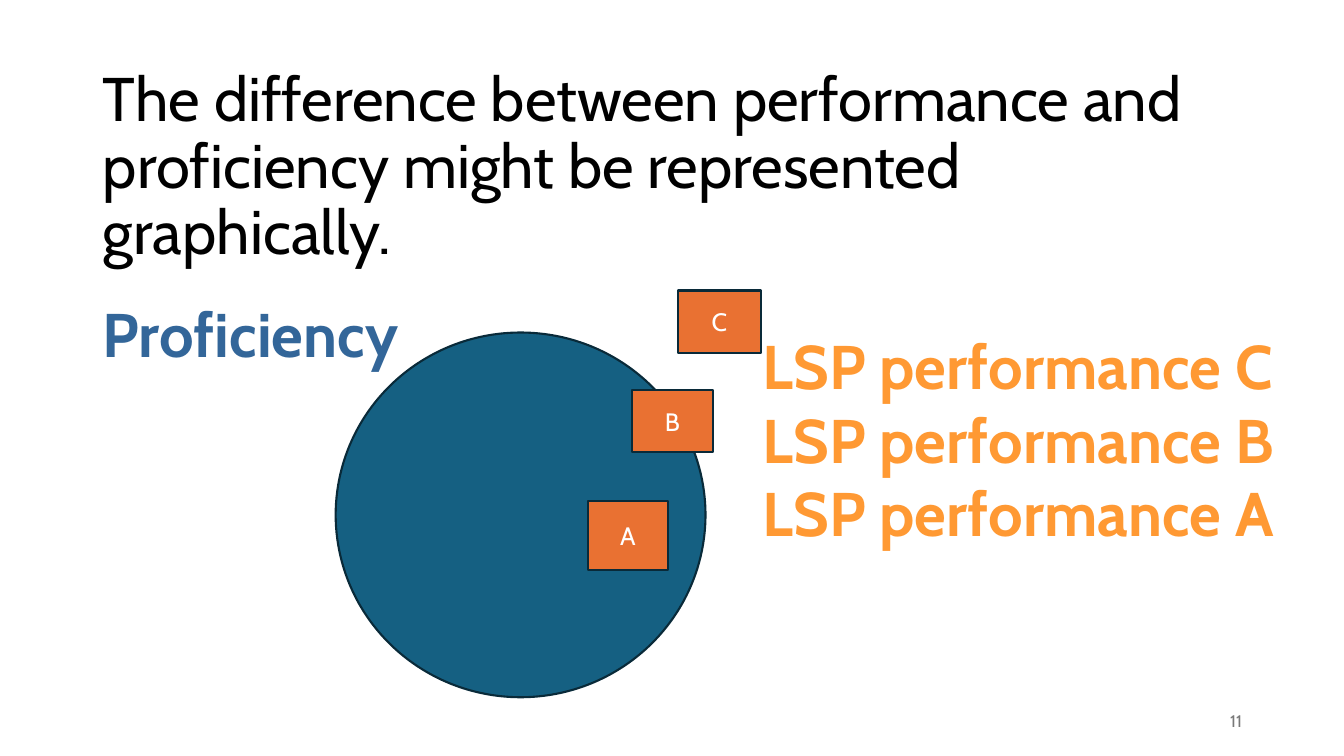
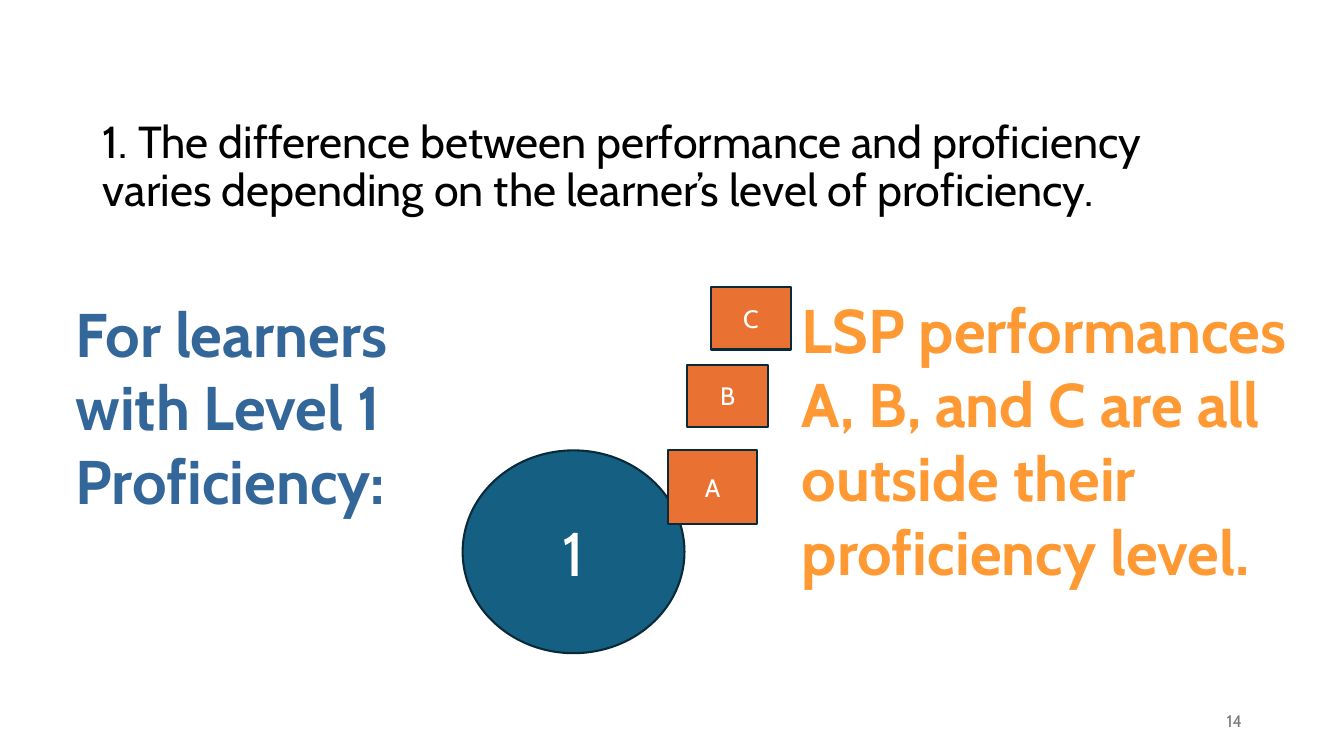
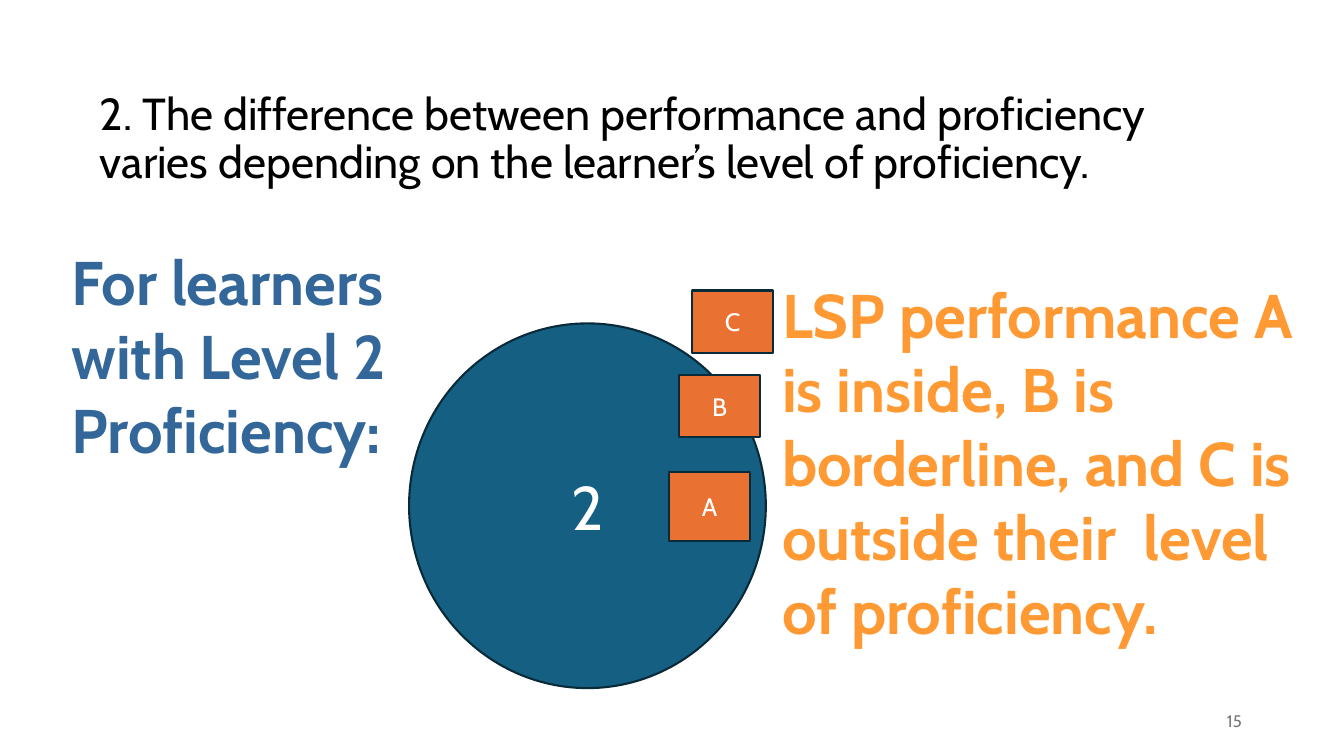
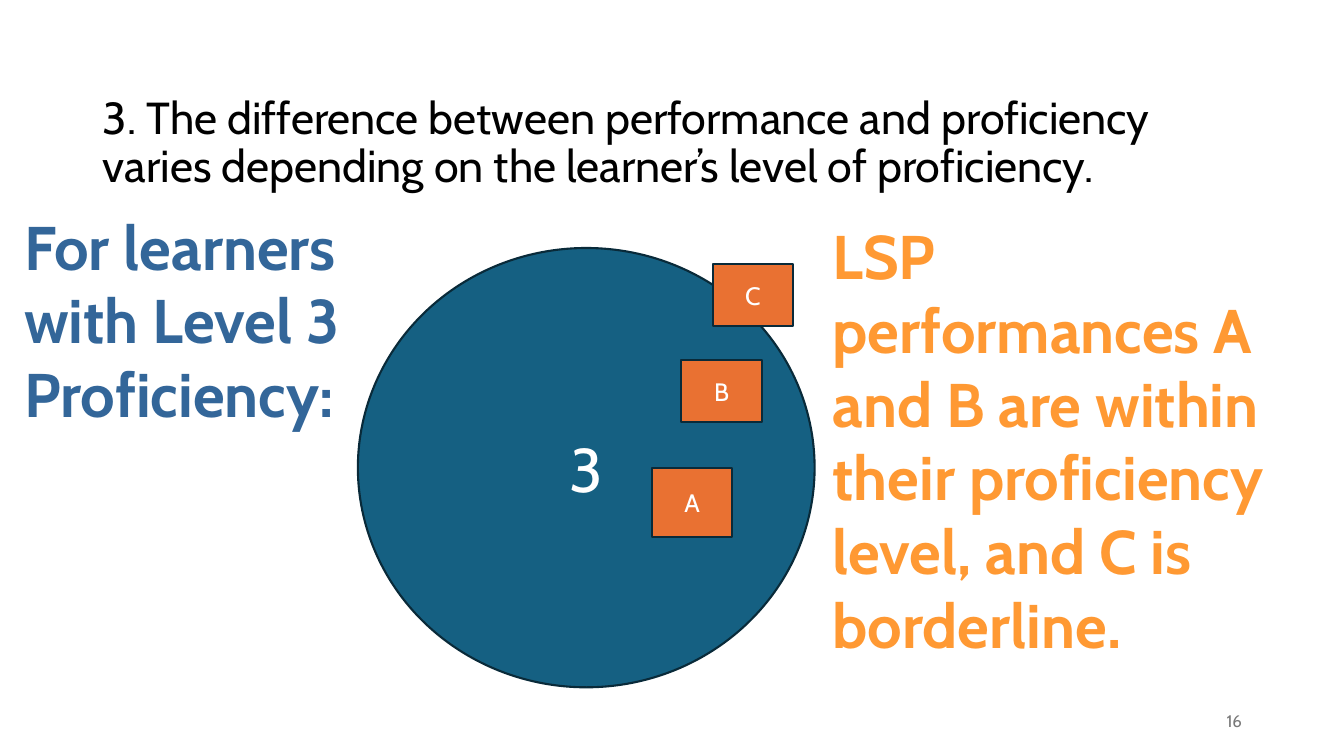
"""Build four slides comparing LSP performances with proficiency levels."""
from dataclasses import dataclass
from typing import NamedTuple

import pptx
import pptx.dml.color
import pptx.enum.shapes
import pptx.enum.text
import pptx.presentation
import pptx.shapes.autoshape
import pptx.slide
import pptx.text.text
import pptx.util

Color = pptx.dml.color.RGBColor
Cm = pptx.util.Cm
Align = pptx.enum.text.PP_ALIGN
Anchor = pptx.enum.text.MSO_ANCHOR
AutoSize = pptx.enum.text.MSO_AUTO_SIZE
ShapeKind = pptx.enum.shapes.MSO_SHAPE


class Area(NamedTuple):
    """A rectangle in centimetres."""

    left: float
    top: float
    width: float
    height: float

    def lengths(self) -> tuple[Cm, Cm, Cm, Cm]:
        """Return the four sides as slide lengths."""
        return Cm(self.left), Cm(self.top), Cm(self.width), Cm(self.height)


@dataclass(frozen=True)
class Theme:
    """Colours, type sizes and common measures of the deck."""

    font: str = "Cabin"
    title: Color = Color(0x00, 0x00, 0x00)
    number: Color = Color(0x79, 0x79, 0x79)
    circle: Color = Color(0x15, 0x60, 0x82)
    tile: Color = Color(0xE9, 0x71, 0x32)
    outline: Color = Color(0x09, 0x2A, 0x39)
    on_fill: Color = Color(0xFF, 0xFF, 0xFF)
    learners: Color = Color(0x33, 0x66, 0x99)
    outcome: Color = Color(0xFF, 0x99, 0x33)
    large_size: float = 44
    title_size: float = 32
    tile_size: float = 18
    number_size: float = 12
    outline_width: float = 1.5
    title_spacing: float = 0.9
    number_area: Area = Area(23.93, 17.65, 7.62, 1.02)


THEME = Theme()


@dataclass(frozen=True)
class Tile:
    """A lettered performance tile."""

    letter: str
    left: float
    top: float
    width: float = 2.03
    height: float = 1.57


@dataclass(frozen=True)
class Caption:
    """A bold text beside the circle."""

    text: str
    area: Area


@dataclass(frozen=True)
class Level:
    """The content of one slide."""

    number: int
    title: str
    circle: Area
    tiles: tuple[Tile, ...]
    learners: Caption
    outcome: Caption
    label: str = ""
    title_area: Area = Area(2.34, 1.9, 29.21, 4.67)
    title_size: float = THEME.title_size


VARIES = "The difference between performance and proficiency varies depending on the learner’s level of proficiency."

LEVELS = (
    Level(
        number=11,
        title="The difference between performance and proficiency might be represented graphically.",
        title_size=THEME.large_size,
        circle=Area(8.46, 8.38, 9.32, 9.19),
        tiles=(
            Tile("B", 15.93, 9.83),
            Tile("A", 14.81, 12.62, height=1.75),
            Tile("C", 17.09, 7.32, width=2.08),
        ),
        learners=Caption("Proficiency", Area(2.34, 7.32, 8.64, 2.13)),
        outcome=Caption(
            "LSP performance C LSP performance B\nLSP performance A",
            Area(18.97, 8.13, 14.1, 5.89),
        ),
    ),
    Level(
        number=14,
        title=f"1. {VARIES}",
        circle=Area(11.66, 11.35, 5.59, 5.11),
        label="1",
        tiles=(
            Tile("B", 17.32, 9.19),
            Tile("A", 16.84, 11.35, width=2.24, height=1.85),
            Tile("C", 17.91, 7.24),
        ),
        learners=Caption("For learners with Level 1 Proficiency:", Area(1.65, 7.32, 9.32, 5.89)),
        outcome=Caption(
            "LSP performances A, B, and C are all outside their proficiency level.",
            Area(19.96, 7.24, 13.91, 7.77),
        ),
    ),
    Level(
        number=15,
        title=f"2. {VARIES}",
        title_area=Area(2.26, 1.32, 29.21, 4.42),
        circle=Area(10.31, 8.15, 8.99, 9.19),
        label="2",
        tiles=(
            Tile("B", 17.12, 9.45),
            Tile("A", 16.87, 11.89, height=1.75),
            Tile("C", 17.45, 7.32),
        ),
        learners=Caption("For learners with Level 2 Proficiency:", Area(1.55, 6.02, 9.32, 5.89)),
        outcome=Caption(
            "LSP performance A is inside, B is borderline, and C is outside their  level of proficiency.",
            Area(19.46, 6.86, 13.77, 11.53),
        ),
    ),
    Level(
        number=16,
        title=f"3. {VARIES}",
        title_area=Area(2.34, 1.9, 29.21, 3.45),
        circle=Area(9.02, 6.25, 11.51, 11.07),
        label="3",
        tiles=(
            Tile("B", 17.17, 9.07),
            Tile("A", 16.43, 11.79, height=1.75),
            Tile("C", 17.96, 6.65),
        ),
        learners=Caption("For learners with Level 3 Proficiency:", Area(0.36, 5.13, 9.3, 6.05)),
        outcome=Caption(
            "LSP performances A and B are within their proficiency level, and C is borderline.",
            Area(20.73, 5.36, 12.4, 11.53),
        ),
    ),
)


def write(
    frame: pptx.text.text.TextFrame,
    text: str,
    size: float,
    color: Color,
    align: Align = Align.LEFT,
    anchor: Anchor = Anchor.MIDDLE,
    bold: bool = False,
) -> None:
    """Fill a text frame with one formatted paragraph per line."""
    frame.word_wrap = True
    frame.vertical_anchor = anchor
    for index, line in enumerate(text.split("\n")):
        para = frame.add_paragraph() if index else frame.paragraphs[0]
        para.alignment = align
        span = para.add_run()
        span.text = line
        span.font.name = THEME.font
        span.font.size = pptx.util.Pt(size)
        span.font.bold = bold
        span.font.color.rgb = color


def add_title(page: pptx.slide.Slide, level: Level) -> None:
    """Place and format the title placeholder."""
    title = page.shapes.title
    title.left, title.top, title.width, title.height = level.title_area.lengths()
    write(title.text_frame, level.title, level.title_size, THEME.title)
    title.text_frame.auto_size = AutoSize.NONE
    title.text_frame.paragraphs[0].line_spacing = THEME.title_spacing


def add_number(page: pptx.slide.Slide, number: int) -> None:
    """Add the slide number at the bottom right."""
    box = page.shapes.add_textbox(*THEME.number_area.lengths())
    write(box.text_frame, str(number), THEME.number_size, THEME.number, align=Align.RIGHT)


def add_figure(
    page: pptx.slide.Slide, kind: ShapeKind, area: Area, fill: Color, label: str, size: float
) -> pptx.shapes.autoshape.Shape:
    """Add an outlined shape with a centred label if it has one."""
    figure = page.shapes.add_shape(kind, *area.lengths())
    figure.shadow.inherit = False
    figure.fill.solid()
    figure.fill.fore_color.rgb = fill
    figure.line.color.rgb = THEME.outline
    figure.line.width = pptx.util.Pt(THEME.outline_width)
    if label:
        write(figure.text_frame, label, size, THEME.on_fill, align=Align.CENTER)
    return figure


def add_caption(page: pptx.slide.Slide, caption: Caption, color: Color) -> None:
    """Add a large bold caption."""
    box = page.shapes.add_textbox(*caption.area.lengths())
    write(box.text_frame, caption.text, THEME.large_size, color, anchor=Anchor.TOP, bold=True)
    box.text_frame.auto_size = AutoSize.SHAPE_TO_FIT_TEXT


def add_level(deck: pptx.presentation.Presentation, level: Level) -> None:
    """Add one slide with its circle, tiles and captions."""
    page = deck.slides.add_slide(deck.slide_layouts.get_by_name("Title Only"))
    add_title(page, level)
    add_number(page, level.number)
    add_figure(
        page, ShapeKind.FLOWCHART_CONNECTOR, level.circle, THEME.circle, level.label, THEME.large_size
    )
    for tile in level.tiles:
        area = Area(tile.left, tile.top, tile.width, tile.height)
        add_figure(page, ShapeKind.RECTANGLE, area, THEME.tile, tile.letter, THEME.tile_size)
    add_caption(page, level.learners, THEME.learners)
    add_caption(page, level.outcome, THEME.outcome)


def main() -> None:
    """Build and save the deck."""
    deck = pptx.Presentation()
    deck.slide_width, deck.slide_height = Cm(33.87), Cm(19.05)
    for level in LEVELS:
        add_level(deck, level)
    deck.save("out.pptx")


if __name__ == "__main__":
    main()
